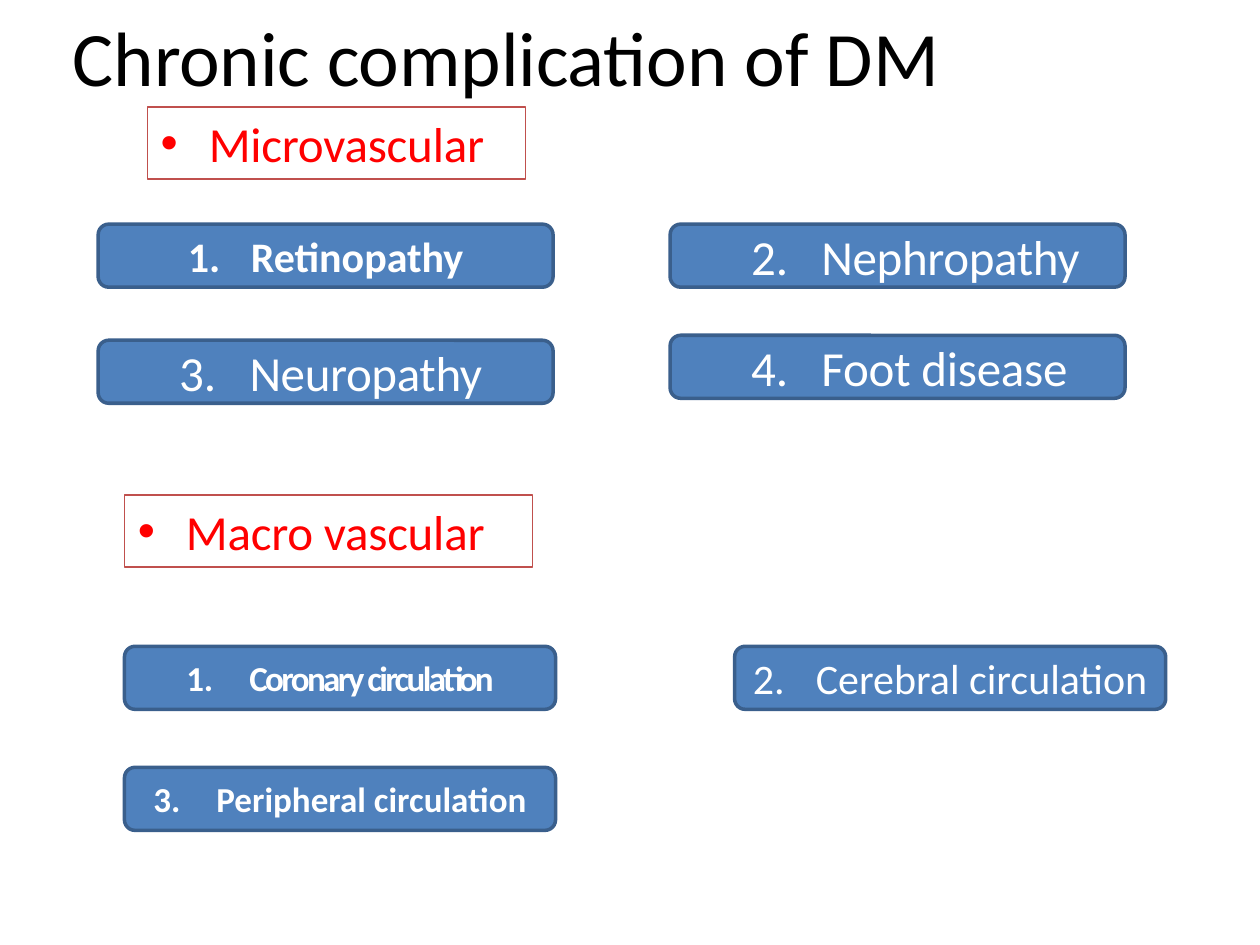
"""Build a slide listing the chronic complications of diabetes mellitus."""
from lxml.etree import SubElement
from pptx import Presentation
from pptx.dml.color import RGBColor
from pptx.enum.shapes import MSO_SHAPE
from pptx.enum.text import MSO_ANCHOR, PP_ALIGN
from pptx.oxml.ns import qn
from pptx.util import Cm, Pt

BLACK = RGBColor(0x00, 0x00, 0x00)
WHITE = RGBColor(0xFF, 0xFF, 0xFF)
RED = RGBColor(0xFF, 0x00, 0x00)
BLUE = RGBColor(0x4F, 0x81, 0xBD)
DARK_BLUE = RGBColor(0x3A, 0x5F, 0x8C)
BRICK = RGBColor(0xC0, 0x50, 0x4D)


def write(tf, text, size=28, color=WHITE, bold=False, spacing=0,
          align=PP_ALIGN.LEFT, margin=0, hang=0, bullet=None, number=None):
    """Write one formatted paragraph, optionally bulleted or numbered."""
    tf.word_wrap = True
    p = tf.paragraphs[0]
    p.alignment = align
    pPr = p._p.get_or_add_pPr()
    pPr.set("marL", str(Cm(margin)))
    pPr.set("indent", str(-Cm(hang)))
    if bullet:
        SubElement(pPr, qn("a:buFont"), typeface="Arial")
        SubElement(pPr, qn("a:buChar"), char=bullet)
    elif number:
        SubElement(pPr, qn("a:buFont"), typeface="+mj-lt")
        SubElement(pPr, qn("a:buAutoNum"), type="arabicPeriod", startAt=str(number))
    r = p.add_run()
    r.text = text
    r.font.name = "Calibri"
    r.font.size = Pt(size)
    r.font.bold = bold
    r.font.color.rgb = color
    r._r.get_or_add_rPr().set("spc", str(round(spacing * 100)))


class Deck:
    """Hold the house style and the current slide."""

    font_colors = {"title": BLACK, "heading": RED, "item": WHITE}
    box_height = 1.27
    heading_height = 1.45

    def __init__(self, prs):
        self.s = prs.slides.add_slide(prs.slide_layouts[6])

    def title(self, text, x, y, w, h):
        """Add the slide title."""
        tf = self.s.shapes.add_textbox(Cm(x), Cm(y), Cm(w), Cm(h)).text_frame
        tf.margin_left = tf.margin_right = tf.margin_bottom = 0
        tf.margin_top = Cm(0.06)
        write(tf, text, size=44, color=self.font_colors["title"], spacing=-0.1)

    def shape(self, kind, x, y, w, h, line, weight):
        """Add an unfilled outlined shape without shadow."""
        sp = self.s.shapes.add_shape(kind, Cm(x), Cm(y), Cm(w), Cm(h))
        sp.shadow.inherit = False
        sp.fill.background()
        sp.line.color.rgb = line
        sp.line.width = Pt(weight)
        return sp

    def heading(self, text, x, y, w):
        """Add a framed, bulleted group heading."""
        sp = self.shape(MSO_SHAPE.RECTANGLE, x, y, w, self.heading_height, BRICK, 0.75)
        sp.text_frame.vertical_anchor = MSO_ANCHOR.TOP
        write(sp.text_frame, text, color=self.font_colors["heading"], spacing=-0.1,
              margin=0.99, hang=0.97, bullet="•")

    def item(self, text, number, x, y, w, **style):
        """Add a numbered item in a rounded box."""
        sp = self.shape(MSO_SHAPE.ROUNDED_RECTANGLE, x, y, w, self.box_height, DARK_BLUE, 2)
        sp.fill.solid()
        sp.fill.fore_color.rgb = BLUE
        sp.text_frame.vertical_anchor = MSO_ANCHOR.MIDDLE
        write(sp.text_frame, text, color=self.font_colors["item"], number=number, **style)


def main():
    """Assemble and save the slide."""
    prs = Presentation()
    prs.slide_width, prs.slide_height = Cm(25.4), Cm(19.05)
    deck = Deck(prs)
    centred = dict(align=PP_ALIGN.CENTER, margin=1.27, hang=1.27)
    indented = dict(margin=2.74, hang=1.42)

    deck.title("Chronic complication of DM", 1.47, 0.13, 20.24, 1.93)
    deck.heading("Microvascular", 2.97, 2.16, 7.62)
    micro = [
        ("Retinopathy", 1.98, 4.52, dict(centred, size=24, bold=True)),
        ("Nephropathy", 13.51, 4.52, dict(indented, spacing=-0.2)),
        ("Neuropathy", 1.98, 6.86, dict(indented, spacing=-0.2)),
        ("Foot disease", 13.51, 6.76, dict(indented, spacing=-0.1)),
    ]
    deck.heading("Macro vascular", 2.51, 9.98, 8.23)
    macro = [
        ("Coronary circulation", 2.51, 13.03, dict(centred, size=20, bold=True, spacing=-1.5)),
        ("Cerebral circulation", 14.81, 13.03, dict(centred, size=24)),
        ("Peripheral circulation", 2.51, 15.47, dict(centred, size=20, bold=True)),
    ]
    for group, width in ((micro, 9.17), (macro, 8.69)):
        for number, (text, x, y, style) in enumerate(group, 1):
            deck.item(text, number, x, y, width, **style)
    prs.save("out.pptx")


if __name__ == "__main__":
    main()
